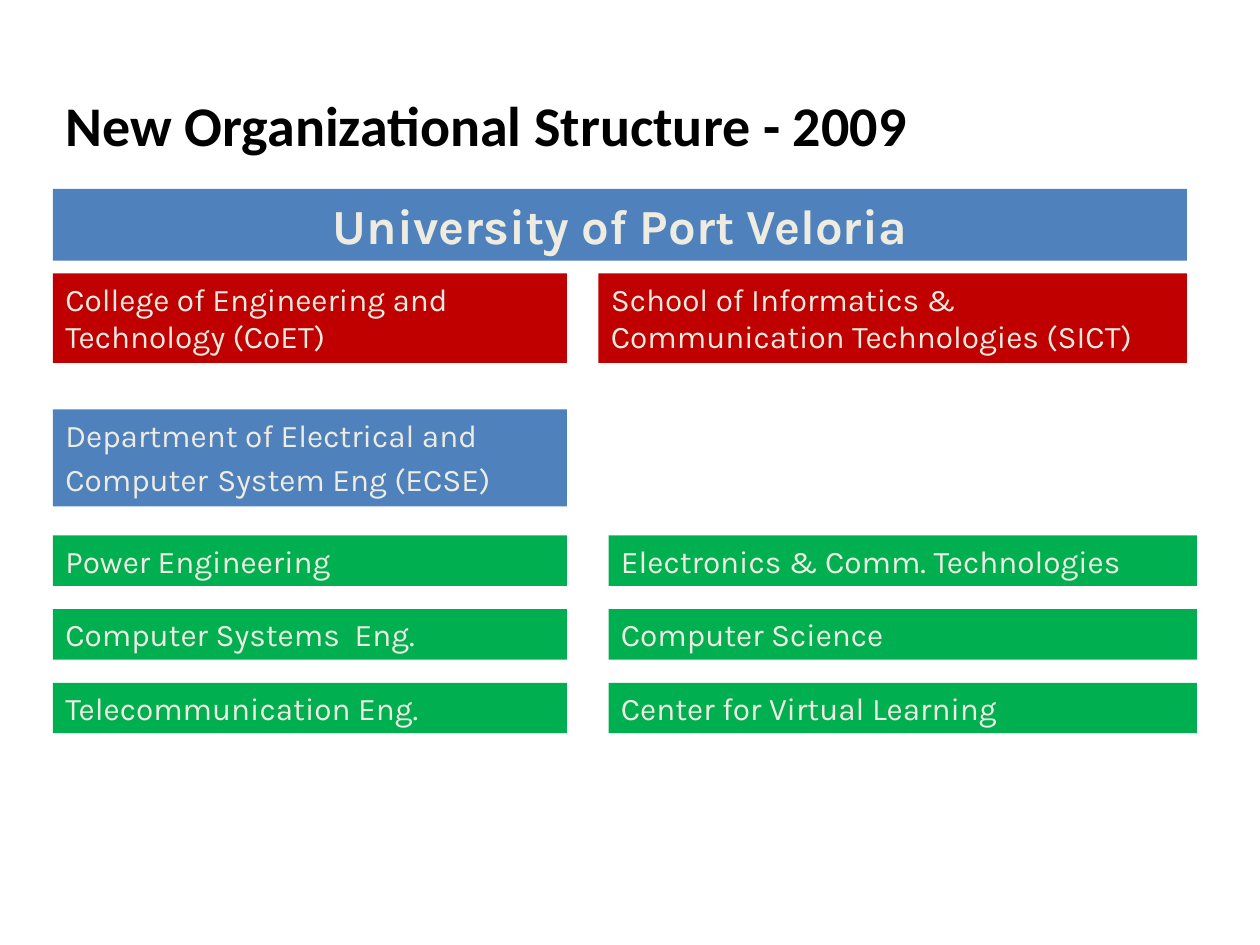
from pptx import Presentation
from pptx.dml.color import RGBColor as RGB
from pptx.enum.shapes import MSO_SHAPE as Shape
from pptx.enum.text import MSO_ANCHOR as Anchor, MSO_AUTO_SIZE as Fit, PP_ALIGN as Align
from pptx.util import Inches, Pt

COLORS = {
    "blue": "4F81BD",
    "red": "C00000",
    "green": "00B050",
    "cream": "EEECE1",
    "black": "000000",
}
LEFT = 0.42
WIDE, SLIM = 4.67, 4.08
UNITS = [
    (LEFT, SLIM, ["Power Engineering", "Computer Systems  Eng.", "Telecommunication Eng."]),
    (4.83, WIDE, ["Electronics & Comm. Technologies", "Computer Science",
                  "Center for Virtual Learning"]),
]


def hue(name):
    """Return the named colour."""
    return RGB.from_string(COLORS[name])


def write(shape, runs, size, font, color, bold=False, align=Align.LEFT):
    """Fill a shape with one paragraph of (text, own size or None) runs."""
    frame = shape.text_frame
    frame.word_wrap = True
    frame.auto_size = Fit.SHAPE_TO_FIT_TEXT
    frame.vertical_anchor = Anchor.TOP
    para = frame.paragraphs[0]
    para.alignment = align
    para.font.name = font
    para.font.size = Pt(size)
    para.font.bold = bold
    para.font.color.rgb = hue(color)
    for text, own in runs:
        run = para.add_run()
        run.text = text
        run.font.name = font
        run.font.size = Pt(own or size)
        run.font.bold = bold
        run.font.color.rgb = hue(color)


def add_title(slide, text):
    """Add the slide heading."""
    box = slide.shapes.add_textbox(Inches(LEFT), Inches(0.67), Inches(8.92), Inches(0.64))
    write(box, [(text, None)], 32, "Calibri", "black", bold=True)


def add_box(slide, area, fill, runs, size=18, **style):
    """Add a filled, unlined rectangle with cream text."""
    box = slide.shapes.add_shape(Shape.RECTANGLE, *map(Inches, area))
    box.shadow.inherit = False
    box.fill.solid()
    box.fill.fore_color.rgb = hue(fill)
    box.line.fill.background()
    write(box, runs, size, "Karla", "cream", **style)


def add_units(slide):
    """Add the two columns of green unit boxes."""
    for left, width, names in UNITS:
        for row, name in enumerate(names):
            area = (left, 4.25 + row * 1.17 / 2, width, 0.4)
            add_box(slide, area, "green", [(name, None)])


def main():
    """Build and save the organization slide."""
    deck = Presentation()
    deck.slide_width, deck.slide_height = Inches(10), Inches(7.5)
    slide = deck.slides.add_slide(deck.slide_layouts[6])
    add_title(slide, "New Organizational Structure - 2009")
    add_box(slide, (LEFT, 1.5, 9, 0.57), "blue", [("University of Port Veloria", None)],
            size=28, bold=True, align=Align.CENTER)
    add_box(slide, (LEFT, 2.17, SLIM, 0.71), "red",
            [("College of Engineering and Technology (CoET)", None)])
    add_box(slide, (4.75, 2.17, WIDE, 0.71), "red",
            [("School of Informatics & Communication Technologies (SICT)", None)])
    add_box(slide, (LEFT, 3.25, SLIM, 0.77), "blue",
            [("Department of Electrical and Computer", None), (" ", 22),
             ("System Eng (ECSE)", None)])
    add_units(slide)
    deck.save("out.pptx")


if __name__ == "__main__":
    main()
